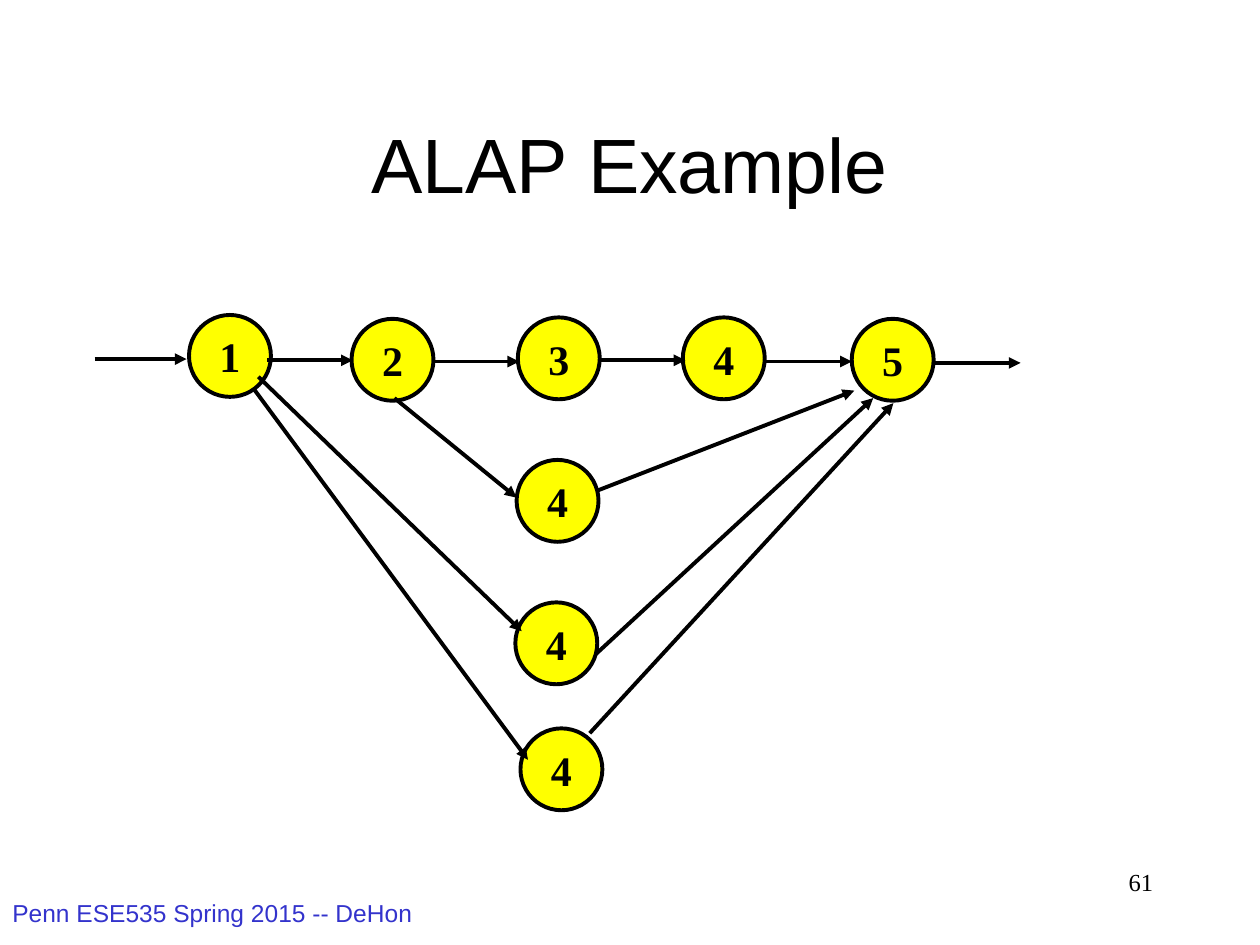
from pptx import Presentation
from pptx.dml.color import RGBColor
from pptx.enum.shapes import MSO_CONNECTOR, MSO_SHAPE
from pptx.enum.text import MSO_ANCHOR, PP_ALIGN
from pptx.oxml.ns import qn
from pptx.util import Pt
from lxml.etree import SubElement

BLACK = RGBColor(0x00, 0x00, 0x00)
YELLOW = RGBColor(0xFF, 0xFF, 0x00)
BLUE = RGBColor(0x33, 0x33, 0xCC)
SANS = "Arial"
SERIF = "Times New Roman"
NODE_SIZE = 46.8
LINE_WIDTH = 2.25
STEP_LENGTH = 49

NODES = [
    ("1", 108, 180),
    ("2", 200.9, 182.2),
    ("3", 295.9, 181.4),
    ("4", 390.2, 181.4),
    ("5", 486.7, 182.2),
    ("4", 295.2, 262.8),
    ("4", 294.5, 344.2),
    ("4", 297.4, 416.2),
]
CHAIN_STARTS = [(152.6, 205.9), (247.7, 206.6), (342.7, 205.9), (437.8, 206.6), (534.2, 207.4)]
ENTRY = (54, 205.2, 106.6, 205.2)
BRANCHES = [
    (225.4, 227.5, 295.2, 284.4),
    (342, 280.1, 488.2, 223.2),
    (340.6, 373.7, 499, 227.5),
    (147.6, 215.3, 298.1, 360.7),
    (144.7, 221.8, 301.7, 434.2),
    (337, 419, 510.5, 230.4),
]


def write_text(frame, text, size, font, color, align, anchor, bold=False):
    """Fill a text frame with one styled paragraph."""
    frame.vertical_anchor = anchor
    paragraph = frame.paragraphs[0]
    paragraph.text = text
    paragraph.alignment = align
    paragraph.font.size = Pt(size)
    paragraph.font.name = font
    paragraph.font.bold = bold
    paragraph.font.color.rgb = color


def add_label(page, bounds, text, size, font, color, align, anchor=MSO_ANCHOR.TOP):
    """Add a wrapping text box at the given bounds."""
    box = page.shapes.add_textbox(*map(Pt, bounds))
    box.text_frame.word_wrap = True
    write_text(box.text_frame, text, size, font, color, align, anchor)


def add_node(page, text, left, top):
    """Add a numbered yellow circle."""
    node = page.shapes.add_shape(MSO_SHAPE.OVAL, *map(Pt, (left, top, NODE_SIZE, NODE_SIZE)))
    node.shadow.inherit = False
    node.fill.solid()
    node.fill.fore_color.rgb = YELLOW
    node.line.color.rgb = BLACK
    node.line.width = Pt(LINE_WIDTH)
    node.text_frame.word_wrap = False
    write_text(node.text_frame, text, 24, SERIF, BLACK, PP_ALIGN.CENTER, MSO_ANCHOR.MIDDLE, True)


def add_arrow(page, ends):
    """Add a straight line with a triangular head at its end."""
    arrow = page.shapes.add_connector(MSO_CONNECTOR.STRAIGHT, *map(Pt, ends))
    arrow.line.color.rgb = BLACK
    arrow.line.width = Pt(LINE_WIDTH)
    properties = arrow.element.spPr
    SubElement(properties.find(qn("a:ln")), qn("a:tailEnd"), type="triangle")
    SubElement(properties, qn("a:effectLst"))


def main():
    """Build the ALAP scheduling slide."""
    deck = Presentation()
    deck.slide_width, deck.slide_height = Pt(720), Pt(540)
    page = deck.slides.add_slide(deck.slide_layouts[6])
    add_label(page, (0, 509.8, 275.8, 30.2), "Penn ESE535 Spring 2015 -- DeHon",
              14, SANS, BLUE, PP_ALIGN.LEFT)
    add_label(page, (516, 492, 150, 36), "61", 14, SERIF, BLACK, PP_ALIGN.RIGHT)
    add_label(page, (54, 48, 612, 90), "ALAP Example", 44, SANS, BLACK,
              PP_ALIGN.CENTER, MSO_ANCHOR.MIDDLE)
    for text, left, top in NODES:
        add_node(page, text, left, top)
    chain = [(x, y, x + STEP_LENGTH, y) for x, y in CHAIN_STARTS]
    for ends in [ENTRY, *chain, *BRANCHES]:
        add_arrow(page, ends)
    deck.save("out.pptx")


if __name__ == "__main__":
    main()
